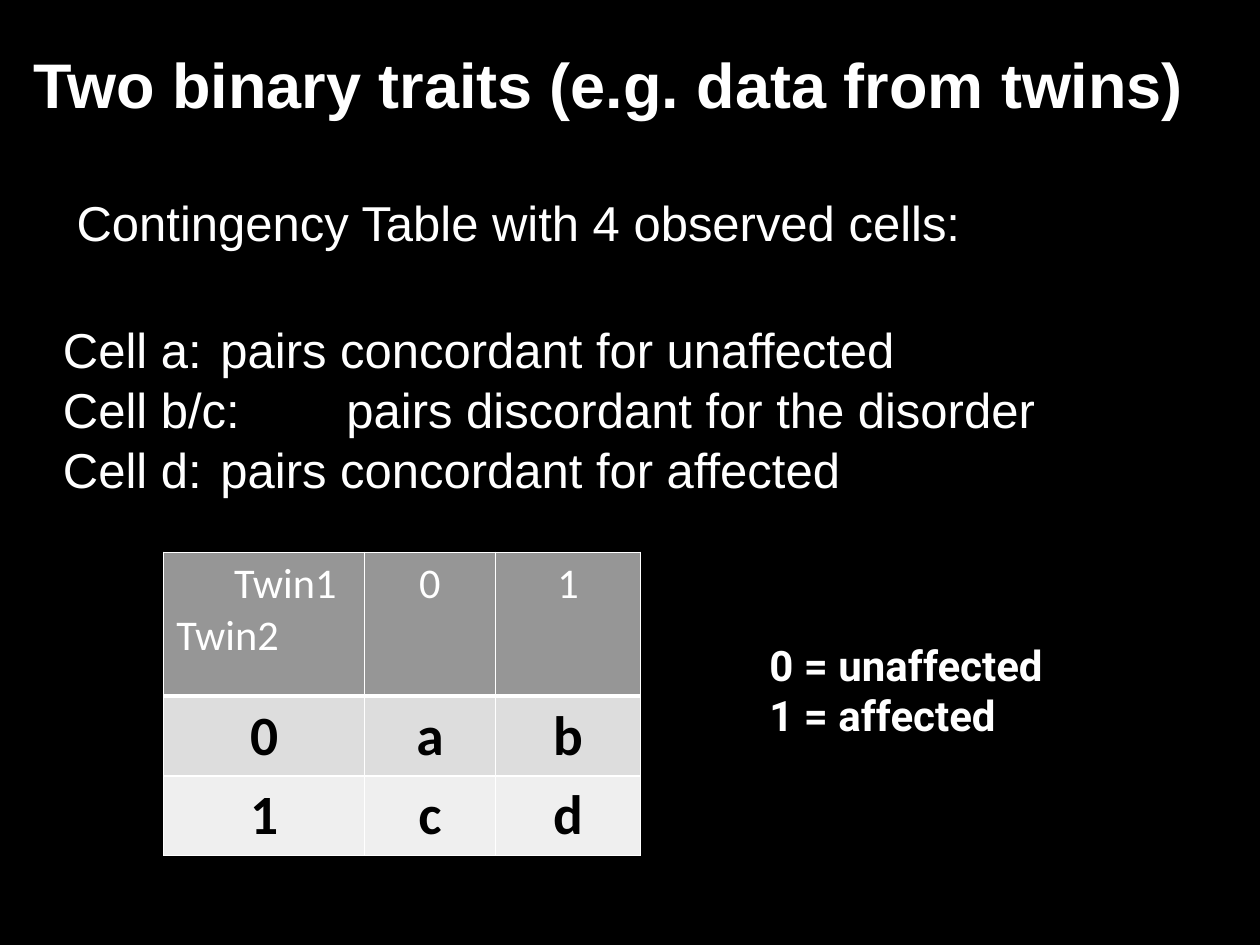
"""Build the slide on two binary traits with its twin contingency table."""
from lxml.etree import SubElement
from pptx import Presentation
from pptx.dml.color import RGBColor
from pptx.enum.text import MSO_ANCHOR as Anchor, PP_ALIGN as Align
from pptx.oxml.ns import qn
from pptx.util import Inches, Pt

COLUMNS, ROWS = 12, 9
WHITE, BLACK = "FFFFFF", "000000"


def paint(fill, color):
    fill.solid()
    fill.fore_color.rgb = RGBColor.from_string(color)


def write(paragraph, text, look, layout):
    for name, value in layout.items():
        setattr(paragraph, name, value)
    run = paragraph.add_run()
    run.text = text
    color, *values = look
    paint(run.font.fill, color)
    for name, value in zip(("name", "size", "bold"), values):
        setattr(run.font, name, value)


deck = Presentation()
deck.slide_width, deck.slide_height = Inches(COLUMNS), Inches(ROWS)
col, row = deck.slide_width // COLUMNS, deck.slide_height // ROWS
slide = deck.slides.add_slide(deck.slide_layouts[5])
paint(slide.background.fill, BLACK)

title = slide.shapes.title
title_box = {"left": 0.24 * col, "top": 0.34 * row, "width": 11.34 * col, "height": row}
for name, value in title_box.items():
    setattr(title, name, int(value))
title_frame = {"margin_left": int(0.08 * col), "vertical_anchor": Anchor.MIDDLE, "word_wrap": True}
for name, value in title_frame.items():
    setattr(title.text_frame, name, value)
write(title.text_frame.paragraphs[0], "Two binary traits (e.g. data from twins)",
      (WHITE, "Arial", Pt(43.2), True), {"alignment": Align.LEFT, "line_spacing": 0.9})

body = slide.shapes.add_textbox(int(0.52 * col), int(1.84 * row), int(11.1 * col), int(3.7 * row))
body_frame = {"margin_left": int(0.08 * col), "margin_top": int(0.1 * row), "word_wrap": True}
for name, value in body_frame.items():
    setattr(body.text_frame, name, value)
body_look = (WHITE, "Arial", Pt(33.6), False)
heading = body.text_frame.paragraphs[0]
heading.line_spacing = 0.8
heading_pr = heading._p.get_or_add_pPr()
heading_pr.set("marL", str(int(0.13 * col)))
write(heading, "Contingency Table with 4 observed cells:", body_look, {})

definitions = [
    ("Cell a: \tpairs concordant for unaffected", 1.5, 58),
    ("Cell b/c: \tpairs discordant for the disorder", 2.7, 13),
    ("Cell d: \tpairs concordant for affected", 1.5, 13),
]
for definition, stop, gap in definitions:
    paragraph = body.text_frame.add_paragraph()
    stops = SubElement(paragraph._p.get_or_add_pPr(), qn("a:tabLst"))
    SubElement(stops, qn("a:tab"), pos=str(int(stop * col)), algn="l")
    write(paragraph, definition, body_look, {"line_spacing": 0.7, "space_before": Pt(gap)})

legend = slide.shapes.add_textbox(int(7.23 * col), int(6.03 * row), int(3.27 * col), int(1.07 * row))
legend_frame = {"margin_top": int(0.06 * row), "word_wrap": True}
for name, value in legend_frame.items():
    setattr(legend.text_frame, name, value)
legend_lines = [legend.text_frame.paragraphs[0], legend.text_frame.add_paragraph()]
for paragraph, meaning in zip(legend_lines, ("0 = unaffected", "1 = affected")):
    write(paragraph, meaning, (WHITE, "Roboto", Pt(28.8), True), {})

counts = [["Twin1\nTwin2", "0", "1"], ["0", "a", "b"], ["1", "c", "d"]]
header_look = (WHITE, "Calibri", Pt(29), False)
count_look = (BLACK, "Calibri", Pt(38), True)
row_styles = [("969696", header_look), ("DDDDDD", count_look), ("EFEFEF", count_look)]
cell_format = {"margin_left": int(0.12 * col), "margin_right": int(0.12 * col),
               "margin_top": int(0.06 * row), "margin_bottom": int(0.06 * row)}
contingency = slide.shapes.add_table(3, 3, int(1.56 * col), int(5.26 * row),
                                     int(4.54 * col), int(2.89 * row)).table
contingency.first_row = contingency.horz_banding = False
for column, width in zip(contingency.columns, (1.91, 1.25, 1.38)):
    column.width = int(width * col)
for line, height in zip(contingency.rows, (1.37, 0.76, 0.76)):
    line.height = int(height * row)

for r, (labels, (shade, look)) in enumerate(zip(counts, row_styles)):
    for c, label in enumerate(labels):
        cell = contingency.cell(r, c)
        for name, value in cell_format.items():
            setattr(cell, name, value)
        for side in "LRTB":
            thick = (r, side) in ((0, "B"), (1, "T"))
            border = SubElement(cell._tc.get_or_add_tcPr(), qn(f"a:ln{side}"),
                                w=str(Pt(3 if thick else 1)))
            SubElement(SubElement(border, qn("a:solidFill")), qn("a:srgbClr"), val=WHITE)
        paint(cell.fill, shade)
        corner = r == c == 0
        for n, part in enumerate(label.split("\n")):
            frame = cell.text_frame
            paragraph = frame.add_paragraph() if n else frame.paragraphs[0]
            if corner and n == 0:
                paragraph._p.get_or_add_pPr().set("marL", str(int(0.55 * col)))
            write(paragraph, part, look, {"alignment": Align.LEFT if corner else Align.CENTER})

deck.save("out.pptx")
